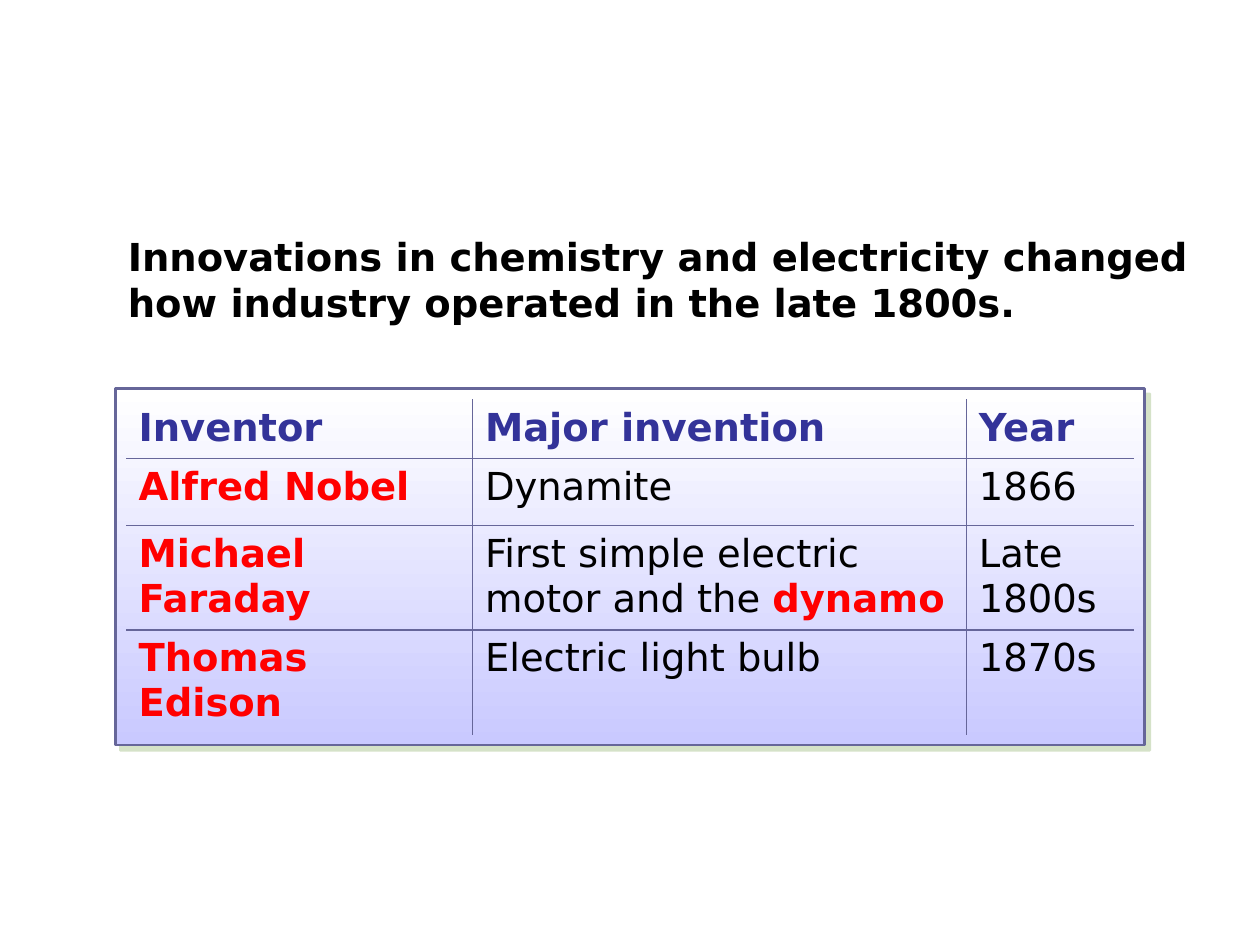
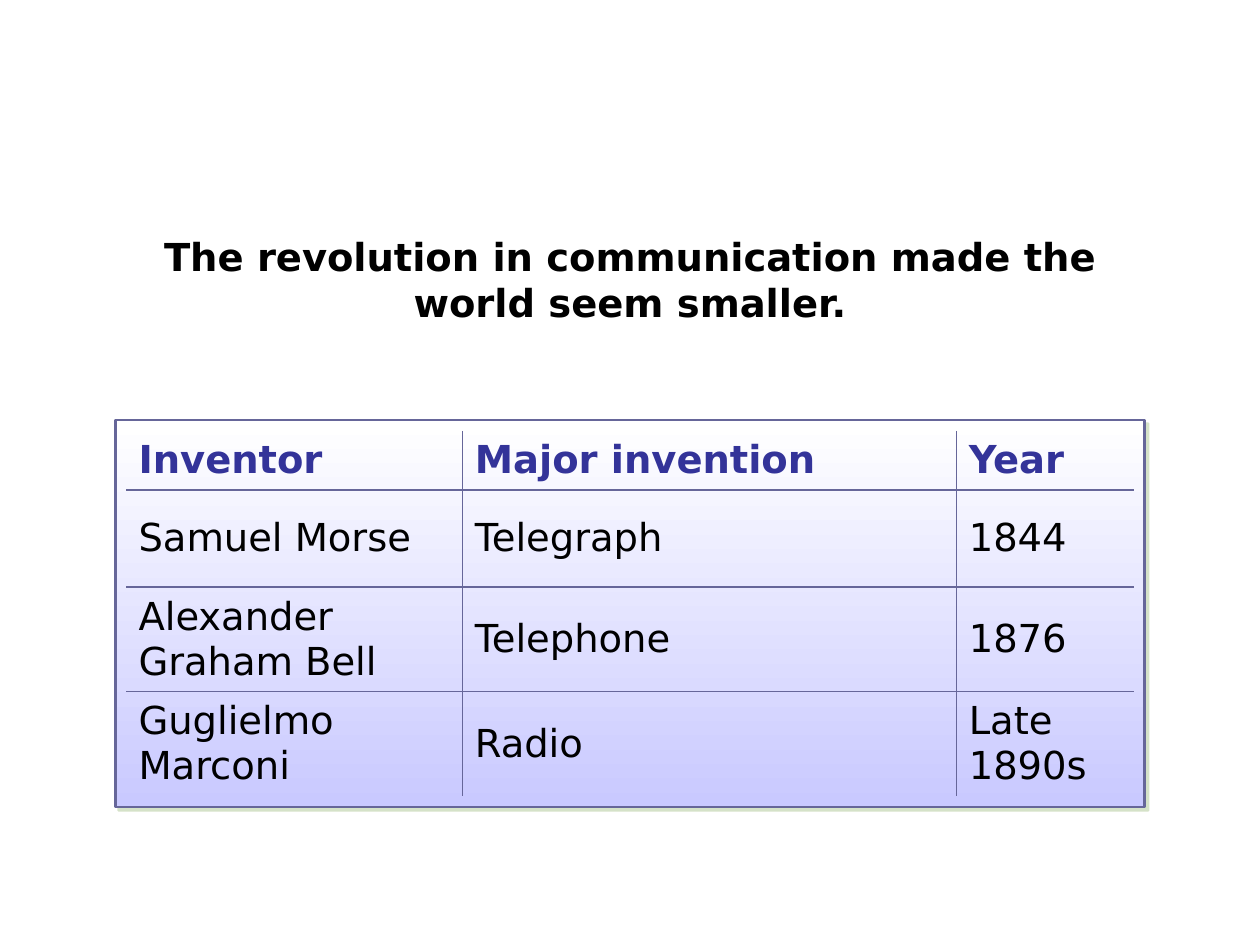
import pptx
import pptx.dml.color
import pptx.enum.shapes
import pptx.enum.text
import pptx.oxml
import pptx.oxml.ns
import pptx.util

IN, PT = pptx.util.Inches, pptx.util.Pt
ALIGN, ANCHOR = pptx.enum.text.PP_ALIGN, pptx.enum.text.MSO_ANCHOR
XMLNS = pptx.oxml.ns.nsdecls("a")

# Content: a piece of text between asterisks is a highlighted key term
HEADER = ("Inventor", "Major invention", "Year")
SLIDES = [
    dict(
        title="Innovations in chemistry and electricity changed "
              "how industry operated in the late 1800s.",
        title_width=8.75, align=ALIGN.LEFT, anchor=ANCHOR.TOP,
        top=3.17, cols=(2.75, 3.92, 1.33), rows=(0.47, 0.53, 0.83, 0.83), shadow=4.2,
        inventions=[
            ("*Alfred Nobel*", "Dynamite", "1866"),
            ("*Michael Faraday*", "First simple electric motor and the *dynamo*", "Late 1800s"),
            ("*Thomas Edison*", "Electric light bulb", "1870s"),
        ]),
    dict(
        title="The revolution in communication made the world seem smaller.",
        title_width=8.17, align=ALIGN.CENTER, anchor=ANCHOR.MIDDLE,
        top=3.42, cols=(2.67, 3.92, 1.41), rows=(0.47, 0.77, 0.83, 0.83), shadow=2.8,
        inventions=[
            ("Samuel Morse", "Telegraph", "1844"),
            ("Alexander Graham Bell", "Telephone", "1876"),
            ("Guglielmo Marconi", "Radio", "Late 1890s"),
        ]),
]

# Shared style
FONT, SIZE = "DejaVu Sans", 22
BLACK, KEY, HEAD, RULE = "000000", "FF0000", "333399", "666699"
PANEL_TOP, PANEL_BOTTOM, SHADOW = "FFFFFF", "C9C9FF", "ADC793"
TABLE_LEFT, TABLE_WIDTH, PAD = 1, 8, 0.085
NO_STYLE = "{2D5ABB26-0587-4C30-8999-92F81FD0307C}"


def rgb(value):
    return pptx.dml.color.RGBColor.from_string(value)


def write(tf, text, color=BLACK, bold=False, align=ALIGN.LEFT):
    p = tf.paragraphs[0]
    p.alignment = align
    for i, part in enumerate(text.split("*")):
        if part:
            key = i % 2 == 1
            r = p.add_run()
            r.text = part
            r.font.name, r.font.size = FONT, PT(SIZE)
            r.font.bold = bold or key
            r.font.color.rgb = rgb(KEY if key else color)


def add_title(s, text, width, align):
    sp = s.shapes.title
    sp.left, sp.top, sp.width, sp.height = IN(TABLE_LEFT - PAD), IN(1.8), IN(width), IN(0.84)
    tf = sp.text_frame
    tf.word_wrap = True
    tf.auto_size = pptx.enum.text.MSO_AUTO_SIZE.NONE
    tf.vertical_anchor = ANCHOR.TOP
    write(tf, text, bold=True, align=align)


def add_panel(s, top, height, distance):
    sp = s.shapes.add_shape(
        pptx.enum.shapes.MSO_SHAPE.RECTANGLE, IN(TABLE_LEFT - PAD), IN(top - PAD),
        IN(TABLE_WIDTH + 2 * PAD), IN(height + 2 * PAD))
    sp.fill.gradient()
    sp.fill.gradient_angle = 270
    for stop, position, color in zip(sp.fill.gradient_stops, (0, 1), (PANEL_TOP, PANEL_BOTTOM)):
        stop.position = position
        stop.color.rgb = rgb(color)
    sp.line.color.rgb = rgb(RULE)
    sp.line.width = PT(1.5)
    # Hard offset shadow at 45 degrees, half transparent
    sp.shadow.inherit = False
    effects = sp._element.spPr.find(pptx.oxml.ns.qn("a:effectLst"))
    effects.append(pptx.oxml.parse_xml(
        f'<a:outerShdw {XMLNS} blurRad="0" dist="{PT(distance)}" dir="2700000" algn="tl" '
        f'rotWithShape="0"><a:srgbClr val="{SHADOW}"><a:alpha val="50000"/></a:srgbClr>'
        f'</a:outerShdw>'))


def set_borders(cell, inner):
    """Rule the sides that face another cell; leave the outer sides open."""
    tcPr = cell._tc.get_or_add_tcPr()
    for side in "LRTB":
        fill = f'<a:solidFill><a:srgbClr val="{RULE}"/></a:solidFill>' if inner[side] else "<a:noFill/>"
        tcPr.append(pptx.oxml.parse_xml(f'<a:ln{side} {XMLNS} w="{PT(1)}">{fill}</a:ln{side}>'))


def add_inventions(s, data, top, cols, rows, anchor):
    frame = s.shapes.add_table(len(rows), len(cols), IN(TABLE_LEFT), IN(top),
                               IN(TABLE_WIDTH), IN(sum(rows)))
    table = frame.table
    table.first_row = table.horz_banding = False
    table._tbl.tblPr.find(pptx.oxml.ns.qn("a:tableStyleId")).text = NO_STYLE
    for column, width in zip(table.columns, cols):
        column.width = IN(width)
    for row, height in zip(table.rows, rows):
        row.height = IN(height)
    for i, texts in enumerate([HEADER] + data):
        for j, text in enumerate(texts):
            cell = table.cell(i, j)
            cell.vertical_anchor = anchor
            set_borders(cell, dict(L=j > 0, R=j < len(cols) - 1, T=i > 0, B=i < len(rows) - 1))
            cell.fill.background()
            write(cell.text_frame, text, color=BLACK if i else HEAD, bold=i == 0)


def main():
    prs = pptx.Presentation()
    prs.slide_width, prs.slide_height = IN(10), IN(7.5)
    for d in SLIDES:
        s = prs.slides.add_slide(prs.slide_layouts[5])
        add_title(s, d["title"], d["title_width"], d["align"])
        add_panel(s, d["top"], sum(d["rows"]), d["shadow"])
        add_inventions(s, d["inventions"], d["top"], d["cols"], d["rows"], d["anchor"])
    prs.save("out.pptx")


if __name__ == "__main__":
    main()
